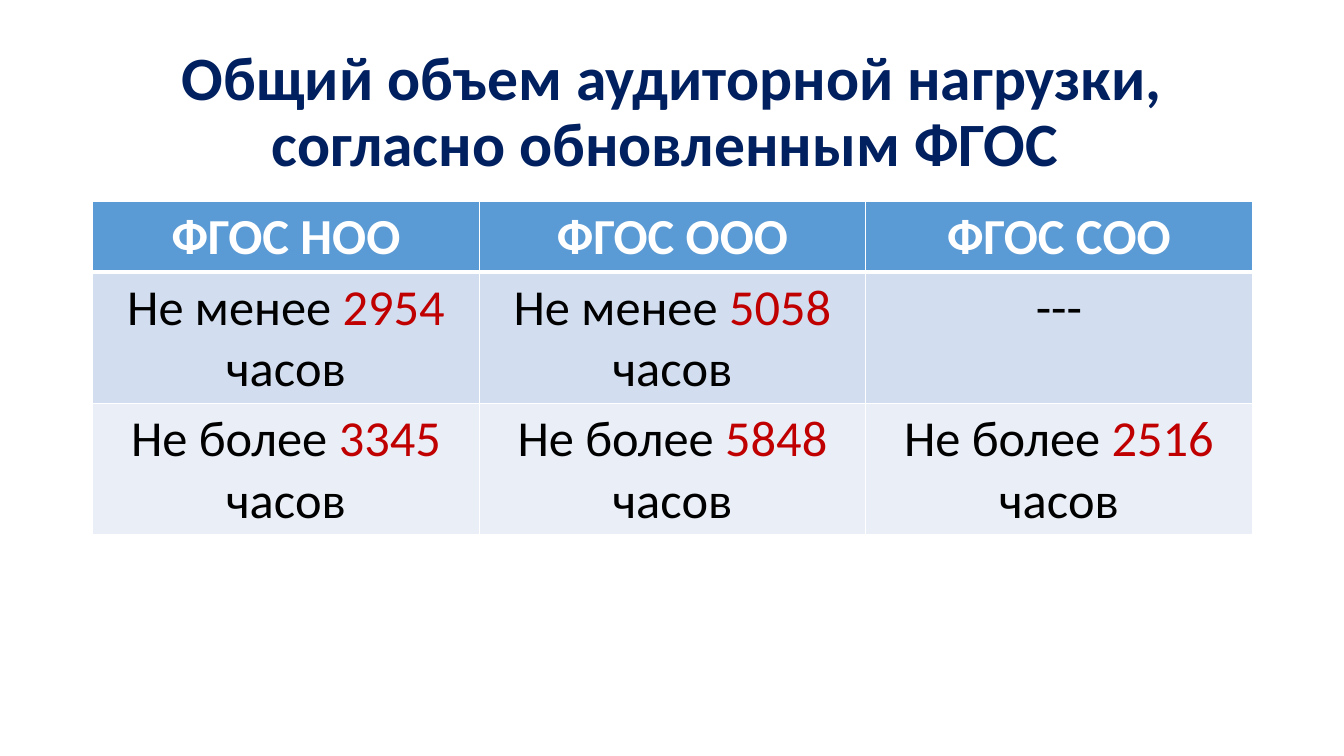
from dataclasses import dataclass

from lxml.etree import SubElement
from pptx import Presentation
from pptx.dml.color import RGBColor as Color
from pptx.enum.text import MSO_ANCHOR as Anchor, PP_ALIGN as Align
from pptx.oxml.ns import qn
from pptx.util import Inches, Pt


@dataclass(frozen=True)
class Theme:
    font: str = "Calibri"
    title: str = "002060"
    head: str = "5B9BD5"
    bands: tuple = ("D2DEEF", "EAEFF7")
    white: str = "FFFFFF"
    ink: str = "000000"
    accent: str = "C00000"
    title_size: int = 44
    cell_size: int = 36


class Deck:
    def __init__(self, theme):
        self.theme = theme
        self.prs = Presentation()
        self.prs.slide_width = Inches(13.33)
        self.prs.slide_height = Inches(7.5)
        self.slide = self.prs.slides.add_slide(self.prs.slide_layouts[6])

    def style(self, run, size, color, bold=False):
        font = run.font
        font.name = self.theme.font
        font.size = Pt(size)
        font.bold = bold
        font.color.rgb = Color.from_string(color)

    def title(self, text, left, top, width, height):
        box = self.slide.shapes.add_textbox(
            Inches(left), Inches(top), Inches(width), Inches(height))
        frame = box.text_frame
        frame.word_wrap = True
        frame.vertical_anchor = Anchor.MIDDLE
        frame.text = text
        para = frame.paragraphs[0]
        para.alignment = Align.CENTER
        para.line_spacing = 0.9
        self.style(para.runs[0], self.theme.title_size, self.theme.title, True)

    def border(self, cell, widths):
        """Draw white cell edges; widths are points for left, right, top, bottom."""
        props = cell._tc.get_or_add_tcPr()
        for side, width in zip("LRTB", widths):
            line = SubElement(props, qn(f"a:ln{side}"), w=str(Pt(width)))
            fill = SubElement(line, qn("a:solidFill"))
            SubElement(fill, qn("a:srgbClr"), val=self.theme.white)

    def cell(self, cell, parts, fill, color, bold, edges):
        """Fill a cell; every second part of its text takes the accent colour."""
        self.border(cell, edges)
        cell.fill.solid()
        cell.fill.fore_color.rgb = Color.from_string(fill)
        para = cell.text_frame.paragraphs[0]
        para.alignment = Align.CENTER
        for num, part in enumerate(parts):
            run = para.add_run()
            run.text = part
            self.style(run, self.theme.cell_size,
                       self.theme.accent if num % 2 else color, bold)

    def table(self, rows, left, top, width, heights):
        theme = self.theme
        grid = self.slide.shapes.add_table(
            len(rows), len(rows[0]), Inches(left), Inches(top),
            Inches(width), Inches(sum(heights))).table
        for r, row in enumerate(rows):
            grid.rows[r].height = Inches(heights[r])
            head = r == 0
            fill = theme.head if head else theme.bands[(r - 1) % 2]
            color = theme.white if head else theme.ink
            edges = (1, 1, 3 if r == 1 else 1, 3 if head else 1)
            for c, parts in enumerate(row):
                self.cell(grid.cell(r, c), parts, fill, color, head, edges)


def hours(limit, count):
    return [f"Не {limit} ", count, " часов"]


def main():
    deck = Deck(Theme())
    deck.title("Общий объем аудиторной нагрузки, согласно обновленным ФГОС ",
               0.92, 0.4, 11.5, 1.45)
    rows = [
        [[f"ФГОС {level}"] for level in ("НОО", "ООО", "СОО")],
        [hours("менее", "2954"), hours("менее", "5058"), ["---"]],
        [hours("более", count) for count in ("3345", "5848", "2516")],
    ]
    deck.table(rows, 0.92, 2, 11.5, (0.7, 1.3, 1.3))
    deck.prs.save("out.pptx")


if __name__ == "__main__":
    main()
